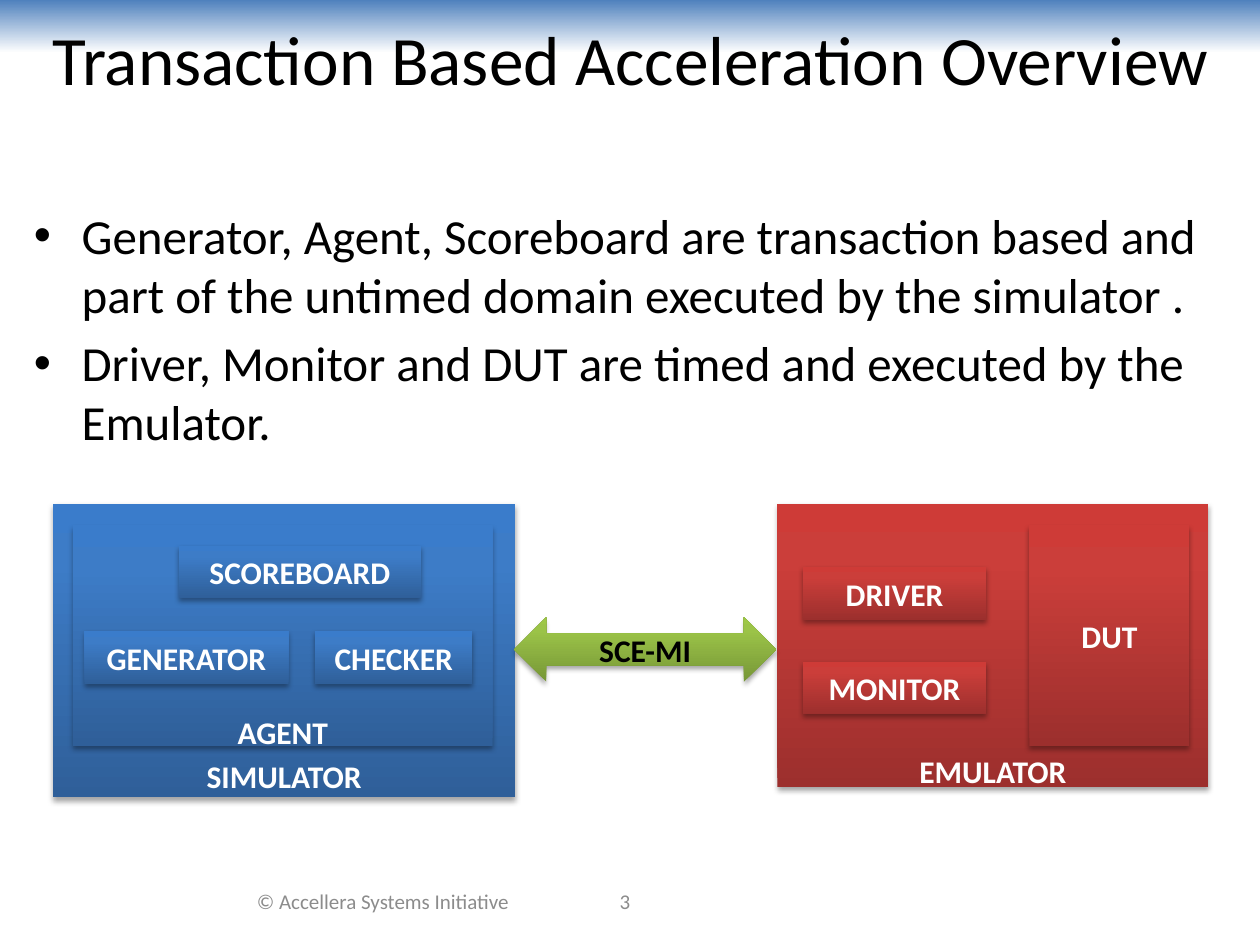
import pptx
import pptx.util
import pptx.dml.color
import pptx.enum.shapes
import pptx.enum.text
import pptx.oxml
import pptx.oxml.ns

In, Pt = pptx.util.Inches, pptx.util.Pt
SHAPE = pptx.enum.shapes.MSO_SHAPE
ANCHOR = pptx.enum.text.MSO_ANCHOR
ALIGN = pptx.enum.text.PP_ALIGN
W, H = 10, 7.5
FONT = "Calibri"
COLORS = {"text": "000000", "footer": "8C8C8C", "label": "FFFFFF"}
GRADIENTS = {  # stops as (percent, colour)
    "banner": [(0, "4F81BD"), (100, "FFFFFF")],
    "blue": [(0, "2F5F99"), (80, "3D7CC7"), (100, "3A7CCB")],
    "red": [(0, "9C2F2D"), (80, "CB3E3A"), (100, "CE3B37")],
    "green": [(0, "779737"), (80, "9BC348"), (100, "9DC746")],
}
TITLE = "Transaction Based Acceleration Overview"
BULLETS = [
    "Generator, Agent, Scoreboard are transaction based and part of the "
    "untimed domain executed by the simulator .",
    "Driver, Monitor and DUT are timed and executed by the Emulator.",
]
FOOTERS = [("© Accellera Systems Initiative", 1.83, 2.42), ("3", 4, 1.92)]

TOP, INNER_TOP, ROW = 4, 4.17, 0.42
# label, box, gradient, offset of the label from the top (None = centred)
BLOCKS = [
    ("SIMULATOR", (0.42, TOP, 3.67, 2.33), "blue", 2.01),
    ("AGENT", (0.58, INNER_TOP, 3.33, 1.75), "blue", 1.49),
    ("SCOREBOARD", (1.42, 4.33, 1.92, ROW), "blue", None),
    ("GENERATOR", (0.67, 5.01, 1.62, ROW), "blue", None),
    ("CHECKER", (2.5, 5.01, 1.25, ROW), "blue", None),
    ("EMULATOR", (6.17, TOP, 3.42, 2.25), "red", 1.97),
    ("DUT", (8.17, INNER_TOP, 1.27, 1.75), "red", None),
    ("DRIVER", (6.37, 4.5, 1.46, ROW), "red", None),
    ("MONITOR", (6.37, 5.25, 1.46, ROW), "red", None),
]
LINK = ("SCE-MI", (4.08, 4.9, 2.08, 0.51))


def xml(tag, body="", attrs=""):
    ns = pptx.oxml.ns.nsdecls("a")
    return pptx.oxml.parse_xml(f"<a:{tag} {ns} {attrs}>{body}</a:{tag}>")


def add_run(p, text, size, color, bold=False):
    r = p.add_run()
    r.text = text
    r.font.name, r.font.size, r.font.bold = FONT, Pt(size), bold
    r.font.color.rgb = pptx.dml.color.RGBColor.from_string(color)


def add_text(s, box, text, size, color):
    tf = s.shapes.add_textbox(*map(In, box)).text_frame
    tf.word_wrap, tf.vertical_anchor = True, ANCHOR.MIDDLE
    p = tf.paragraphs[0]
    p.alignment = ALIGN.CENTER
    add_run(p, text, size, color)


def add_gradient_shape(s, kind, box, gradient, angle):
    """Angle is counter-clockwise: 90 runs from bottom to top."""
    sp = s.shapes.add_shape(kind, *map(In, box))
    sp.shadow.inherit = False
    sp.line.fill.background()
    sp.fill.gradient()
    sp.fill.gradient_angle = angle
    stops = sp.fill._fill._gradFill.gsLst
    for old in list(stops):
        stops.remove(old)
    for pos, color in GRADIENTS[gradient]:
        stops.append(xml("gs", f'<a:srgbClr val="{color}"/>', f'pos="{pos * 1000}"'))
    return sp


def add_block(s, label, box, gradient, offset=None, kind=SHAPE.RECTANGLE, color="label"):
    sp = add_gradient_shape(s, kind, box, gradient, 90)
    effects = sp._element.spPr.find(pptx.oxml.ns.qn("a:effectLst"))
    effects.append(xml(
        "outerShdw", '<a:srgbClr val="000000"><a:alpha val="35000"/></a:srgbClr>',
        f'blurRad="{Pt(3.1)}" dist="{Pt(1.8)}" dir="5400000" rotWithShape="0"'))
    tf = sp.text_frame
    tf.word_wrap = False
    tf.vertical_anchor = ANCHOR.MIDDLE if offset is None else ANCHOR.TOP
    tf.margin_top, tf.margin_bottom = In(offset or 0), 0
    p = tf.paragraphs[0]
    p.alignment = ALIGN.CENTER
    add_run(p, label, 18, COLORS[color], bold=True)


def add_bullets(s):
    tf = s.shapes.add_textbox(In(0.17), In(1.58), In(9.75), In(2.33)).text_frame
    tf.word_wrap = True
    for i, text in enumerate(BULLETS):
        p = tf.add_paragraph() if i else tf.paragraphs[0]
        pPr = p._p.get_or_add_pPr()
        pPr.set("marL", str(In(0.38)))
        pPr.set("indent", str(-In(0.38)))
        pPr.append(xml("buFont", attrs='typeface="Arial"'))
        pPr.append(xml("buChar", attrs='char="•"'))
        p.space_before = Pt(5.6 if i else 0)
        add_run(p, text, 28, COLORS["text"])


def main():
    prs = pptx.Presentation()
    prs.slide_width, prs.slide_height = In(W), In(H)
    s = prs.slides.add_slide(prs.slide_layouts[6])
    add_gradient_shape(s, SHAPE.RECTANGLE, (0, 0, W, 0.42), "banner", 270)
    add_text(s, (0.17, -0.17, 9.67, 1.25), TITLE, 39.6, COLORS["text"])
    add_bullets(s)
    for text, left, width in FOOTERS:
        add_text(s, (left, 6.95, width, 0.4), text, 12, COLORS["footer"])
    for block in BLOCKS:
        add_block(s, *block)
    add_block(s, *LINK, "green", kind=SHAPE.LEFT_RIGHT_ARROW, color="text")
    prs.save("out.pptx")


if __name__ == "__main__":
    main()
